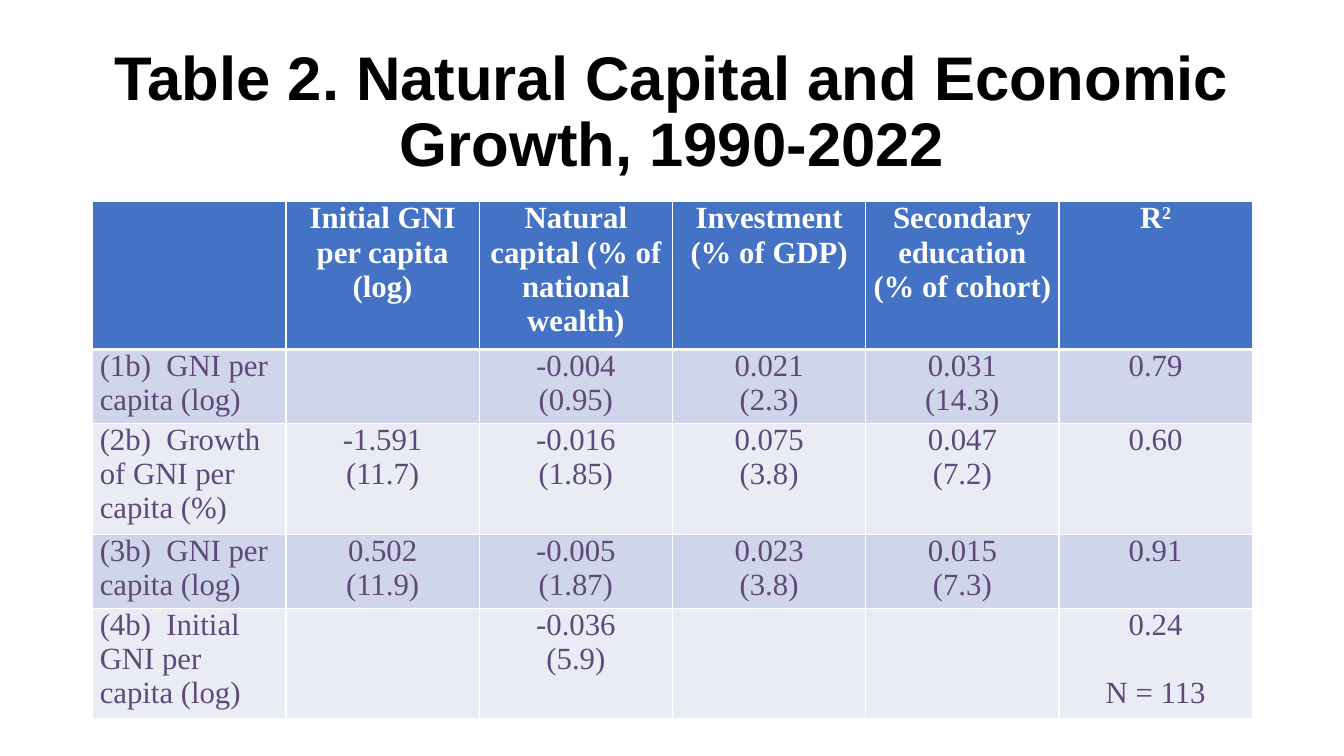
from lxml import etree
from pptx import Presentation
from pptx import util as u
from pptx.dml.color import RGBColor
from pptx.enum import text
from pptx.oxml import ns

HEADERS = ["", "Initial GNI per capita (log)",
           "Natural capital (% of national wealth)", "Investment (% of GDP)",
           "Secondary education\n(% of cohort)", "R^2"]
RESULTS = [
    ["(1b)\tGNI per capita (log)", "", "-0.004\n(0.95)", "0.021\n(2.3)",
     "0.031\n(14.3)", "0.79"],
    ["(2b)\tGrowth of GNI per capita (%)", "-1.591\n(11.7)", "-0.016\n(1.85)",
     "0.075\n(3.8)", "0.047\n(7.2)", "0.60"],
    ["(3b)\tGNI per capita (log)", "0.502\n(11.9)", "-0.005\n(1.87)",
     "0.023\n(3.8)", "0.015\n(7.3)", "0.91"],
    ["(4b)\tInitial GNI per capita (log)", "", "-0.036\n(5.9)", "", "",
     "0.24\nN = 113"],
]
ROW_LINES = [4, 2, 3, 2, 3]
LINE_HEIGHT = 0.337


def rgb(value):
    return RGBColor.from_string(value)


def child(parent, tag, **attributes):
    return etree.SubElement(parent, ns.qn(tag), attributes)


class SlideBuilder:
    title = {"name": "Arial", "size": u.Pt(44), "bold": True}
    header = {"name": "Times New Roman", "size": u.Pt(22), "bold": True}
    body = {**header, "bold": False}
    header_fill, bands = "4472C4", ("CFD5EA", "E9EBF5")
    white, black, purple = "FFFFFF", "000000", "5F497A"

    def __init__(self, deck):
        self.slide = deck.slides.add_slide(deck.slide_layouts[6])

    def add_spans(self, para, words, style, color):
        """Add words to para; whatever follows ^ is superscript."""
        for index, part in enumerate(words.split("^")):
            span = para.add_run()
            span.text = part
            for name, value in style.items():
                setattr(span.font, name, value)
            span.font.color.rgb = rgb(color)
            if index:
                span._r.get_or_add_rPr().set("baseline", "30000")

    def add_title(self, words, left, top, width, height):
        box = self.slide.shapes.add_textbox(*map(u.Inches, (left, top, width, height)))
        frame = box.text_frame
        frame.word_wrap = True
        frame.vertical_anchor = text.MSO_ANCHOR.MIDDLE
        para = frame.paragraphs[0]
        para.alignment = text.PP_ALIGN.CENTER
        para.line_spacing = 0.9
        self.add_spans(para, words, self.title, self.black)

    def add_borders(self, cell, top, bottom):
        properties = cell._tc.get_or_add_tcPr()
        for side, points in zip("LRTB", (1, 1, top, bottom)):
            line = child(properties, f"a:ln{side}", w=str(u.Pt(points)))
            child(child(line, "a:solidFill"), "a:srgbClr", val=self.white)

    def fill_cell(self, cell, words, row, column):
        self.add_borders(cell, 3 if row == 1 else 1, 1 if row else 3)
        cell.fill.solid()
        cell.fill.fore_color.rgb = rgb(self.bands[(row - 1) % 2] if row else self.header_fill)
        cell.margin_left = cell.margin_right = u.Inches(0.07)
        cell.margin_top = cell.margin_bottom = 0
        style, color = (self.body, self.purple) if row else (self.header, self.white)
        frame = cell.text_frame
        for index, line in enumerate(words.split("\n") if words else []):
            para = frame.add_paragraph() if index else frame.paragraphs[0]
            para.alignment = text.PP_ALIGN.CENTER if column else text.PP_ALIGN.LEFT
            if line.startswith("N ="):
                para.space_before = u.Inches(LINE_HEIGHT)
            if "\t" in line:
                stops = child(para._p.get_or_add_pPr(), "a:tabLst")
                child(stops, "a:tab", pos=str(u.Inches(0.66)), algn="l")
            self.add_spans(para, line, style, color)

    def add_table(self, rows, left, top, width):
        height = LINE_HEIGHT * sum(ROW_LINES)
        table = self.slide.shapes.add_table(
            len(rows), len(rows[0]), *map(u.Inches, (left, top, width, height))).table
        table.horz_banding = False
        for column in table.columns:
            column.width = u.Inches(width / len(rows[0]))
        for row, values in enumerate(rows):
            table.rows[row].height = u.Inches(LINE_HEIGHT * ROW_LINES[row])
            for column, words in enumerate(values):
                self.fill_cell(table.cell(row, column), words, row, column)


def main():
    deck = Presentation()
    deck.slide_width, deck.slide_height = u.Inches(13.33), u.Inches(7.5)
    builder = SlideBuilder(deck)
    builder.add_title("Table 2. Natural Capital and Economic Growth, 1990-2022",
                      0.92, 0.4, 11.5, 1.45)
    builder.add_table([HEADERS, *RESULTS], 0.92, 2, 11.5)
    deck.save("out.pptx")


if __name__ == "__main__":
    main()
